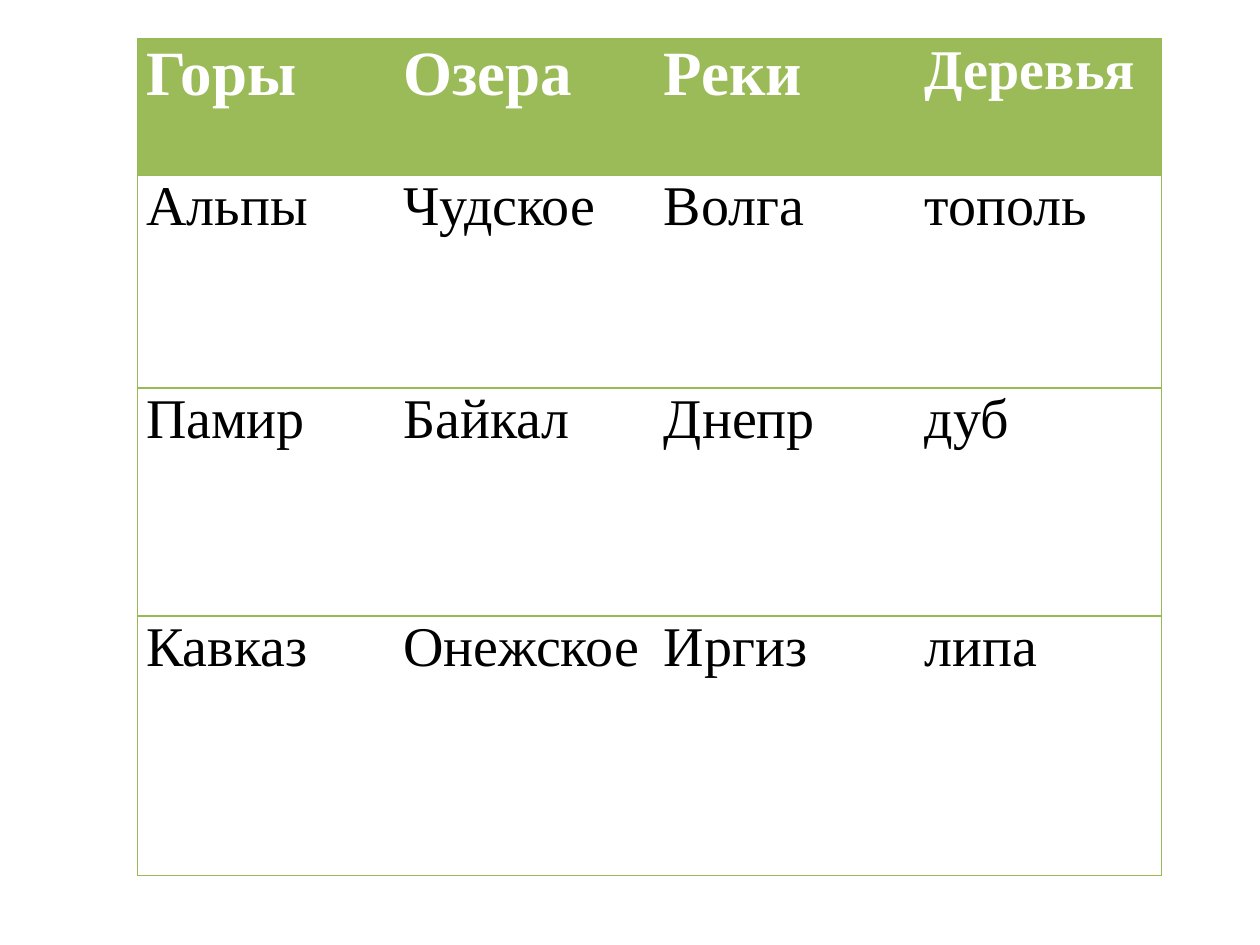
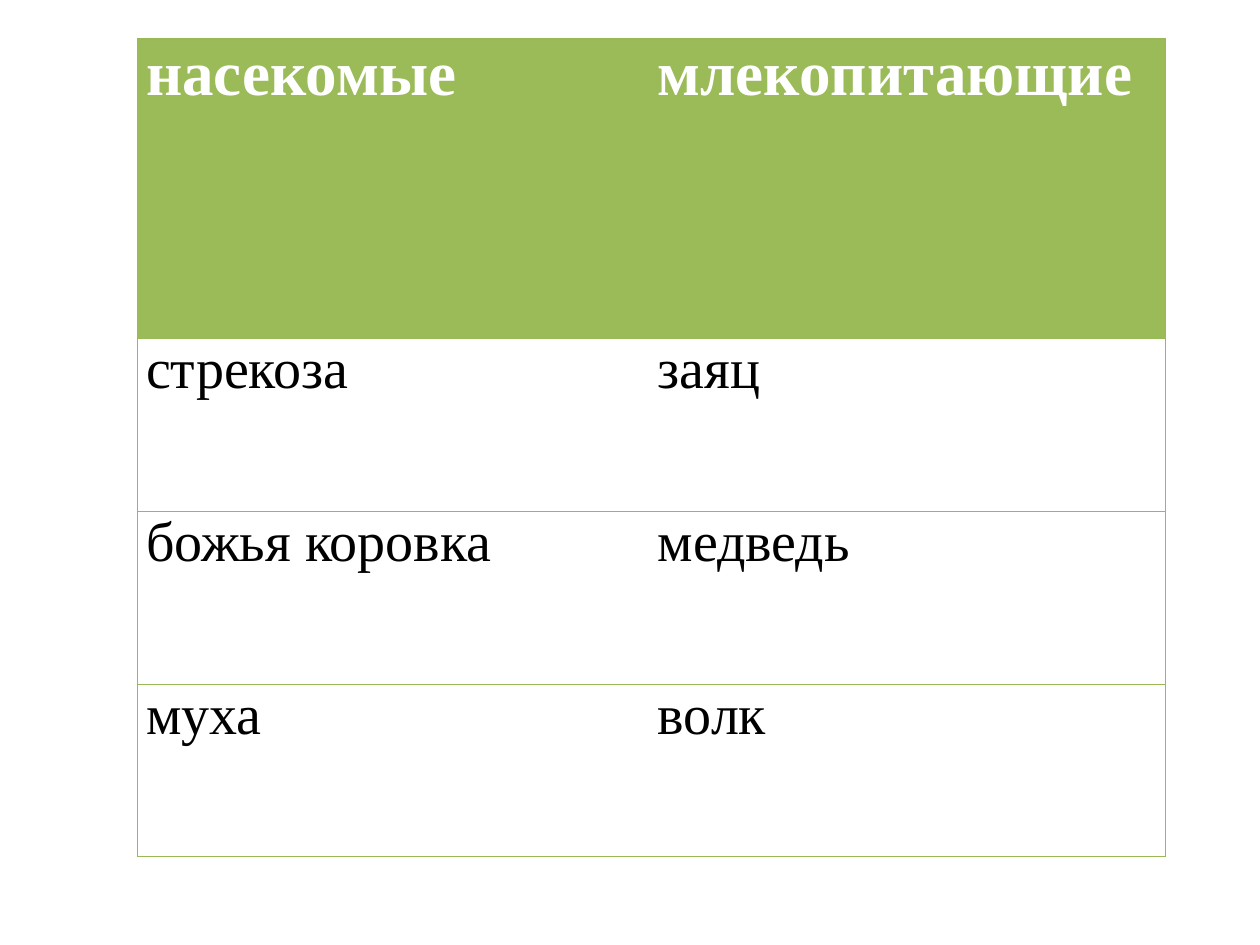
from pptx import Presentation
from pptx.dml.color import RGBColor
from pptx.oxml.ns import qn
from pptx.util import Inches, Pt
from lxml.etree import SubElement

TABLES = [
    {
        "rows": [
            ("Горы", "Озера", "Реки", "Деревья"),
            ("Альпы", "Чудское", "Волга", "тополь"),
            ("Памир", "Байкал", "Днепр", "дуб"),
            ("Кавказ", "Онежское", "Иргиз", "липа"),
        ],
        "widths": (2.04, 2.07, 2.07, 1.95),
        "heights": (1.08, 1.69, 1.81, 2.06),
    },
    {
        "rows": [
            ("насекомые", "млекопитающие"),
            ("стрекоза", "заяц"),
            ("божья коровка", "медведь"),
            ("муха", "волк"),
        ],
        "widths": (4.06, 4.1),
        "heights": (2.38, 1.37, 1.37, 1.37),
    },
]
LEFT, TOP = 1.09, 0.31
GREEN, EDGE, WHITE, BLACK = "9BBB59", "98B955", "FFFFFF", "000000"
HEADER = {"name": "Times New Roman", "size": Pt(36), "bold": True}
BODY = {"name": "Times New Roman", "size": Pt(32), "bold": False}
SMALL_HEADERS = {"Деревья": Pt(32)}
MARGINS = {"margin_left": Inches(0.07), "margin_right": Inches(0.07),
           "margin_top": 0, "margin_bottom": 0}
PLAIN_STYLE = "{2D5ABB26-0587-4C30-8999-92F81FD0307C}"


def color(value):
    return RGBColor.from_string(value)


def apply(target, values):
    for key, value in values.items():
        setattr(target, key, value)


def add_edges(cell, sides):
    properties = cell._tc.get_or_add_tcPr()
    for side in sides:
        line = SubElement(properties, qn(f"a:ln{side}"), w=str(Pt(0.75)))
        fill = SubElement(line, qn("a:solidFill"))
        SubElement(fill, qn("a:srgbClr"), val=EDGE)


def write_cell(cell, words, is_header, sides):
    apply(cell, MARGINS)
    add_edges(cell, sides)
    if is_header:
        cell.fill.solid()
        cell.fill.fore_color.rgb = color(GREEN)
    else:
        cell.fill.background()
    run = cell.text_frame.paragraphs[0].add_run()
    run.text = words
    apply(run.font, HEADER if is_header else BODY)
    if words in SMALL_HEADERS:
        run.font.size = SMALL_HEADERS[words]
    run.font.color.rgb = color(WHITE if is_header else BLACK)


def add_word_table(slide, rows, widths, heights):
    table = slide.shapes.add_table(
        len(rows), len(widths), Inches(LEFT), Inches(TOP),
        Inches(sum(widths)), Inches(sum(heights))).table
    table._tbl.tblPr.find(qn("a:tableStyleId")).text = PLAIN_STYLE
    for column, width in zip(table.columns, widths):
        column.width = Inches(width)
    for row, height in zip(table.rows, heights):
        row.height = Inches(height)
    last = len(widths) - 1
    for r, row in enumerate(rows):
        for c, words in enumerate(row):
            sides = "L" * (c == 0) + "R" * (c == last) + "TB"
            write_cell(table.cell(r, c), words, r == 0, sides)


def main():
    deck = Presentation()
    deck.slide_width, deck.slide_height = Inches(10), Inches(7.5)
    for content in TABLES:
        add_word_table(deck.slides.add_slide(deck.slide_layouts[6]), **content)
    deck.save("out.pptx")


if __name__ == "__main__":
    main()
